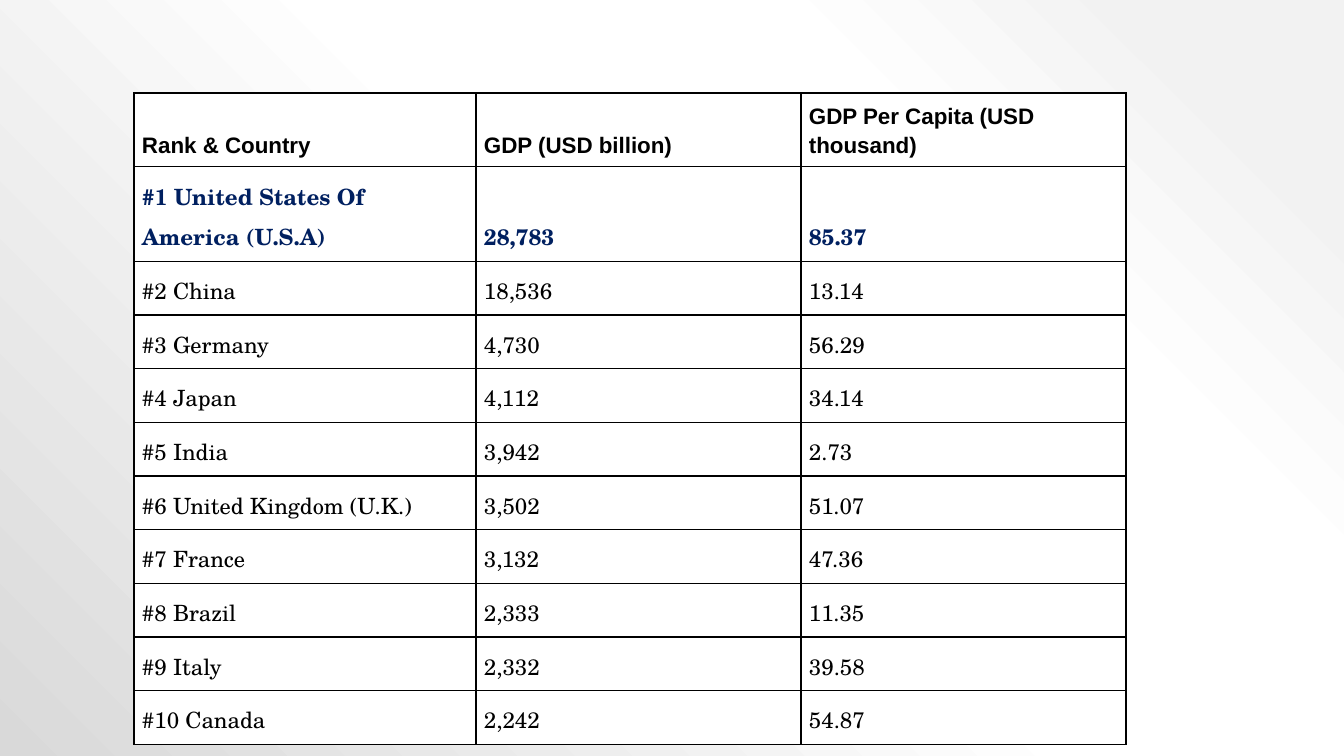
from pptx import Presentation
from pptx.dml.color import RGBColor
from pptx.enum.text import MSO_VERTICAL_ANCHOR as Anchor
from pptx.oxml import parse_xml
from pptx.oxml.ns import nsdecls
from pptx.util import Emu, Pt

BLACK = RGBColor(0x00, 0x00, 0x00)
WHITE = RGBColor(0xFF, 0xFF, 0xFF)
NAVY = RGBColor(0x00, 0x20, 0x60)
MIST = RGBColor(0xF2, 0xF2, 0xF2)
SILVER = RGBColor(0xD9, 0xD9, 0xD9)

BACKDROP_STOPS = [(10, MIST), (28, WHITE), (48, WHITE), (100, SILVER)]
COLUMN_WIDTHS = [342, 325, 325]
ROW_HEIGHTS = [51, 86] + [52] * 9
GDP_ROWS = [
    ("Rank & Country", "GDP (USD billion)", "GDP Per Capita (USD thousand)"),
    ("#1 United States Of America (U.S.A)", "28,783", "85.37"),
    ("#2 China", "18,536", "13.14"),
    ("#3 Germany", "4,730", "56.29"),
    ("#4 Japan", "4,112", "34.14"),
    ("#5 India", "3,942", "2.73"),
    ("#6 United Kingdom (U.K.)", "3,502", "51.07"),
    ("#7 France", "3,132", "47.36"),
    ("#8 Brazil", "2,333", "11.35"),
    ("#9 Italy", "2,332", "39.58"),
    ("#10 Canada", "2,242", "54.87"),
]
HEADER = {"name": "Arial", "bold": True, "color": BLACK}
LEADER = {"name": "TeX Gyre Schola", "bold": True, "color": NAVY}
BODY = {"name": "TeX Gyre Schola", "bold": False, "color": BLACK}
ROW_STYLES = [HEADER, LEADER] + [BODY] * 9


def px(length):
    return Emu(round(length * 914400 / 100.8))


class SlideBuilder:
    text_size = Pt(16)
    line_spacing = 1.15
    border_width = Pt(1)
    cell_format = {
        "vertical_anchor": Anchor.BOTTOM,
        "margin_left": px(8),
        "margin_right": px(8),
        "margin_top": px(8),
        "margin_bottom": px(8),
    }
    table_format = {"first_row": False, "horz_banding": False}

    def __init__(self, deck):
        self.page = deck.slides.add_slide(deck.slide_layouts[6])

    def backdrop(self, stops):
        marks = "".join(
            f'<a:gs pos="{percent * 1000}"><a:srgbClr val="{color}"/></a:gs>'
            for percent, color in stops
        )
        background = parse_xml(
            f'<p:bg {nsdecls("p", "a")}><p:bgPr><a:gradFill rotWithShape="1">'
            f'<a:gsLst>{marks}</a:gsLst><a:path path="circle">'
            '<a:fillToRect l="100000" b="100000"/></a:path></a:gradFill>'
            '<a:effectLst/></p:bgPr></p:bg>'
        )
        self.page.element.cSld.insert(0, background)

    def border(self, cell, color):
        properties = cell._tc.get_or_add_tcPr()
        for side in ("lnL", "lnR", "lnT", "lnB"):
            properties.append(parse_xml(
                f'<a:{side} {nsdecls("a")} w="{self.border_width}"><a:solidFill>'
                f'<a:srgbClr val="{color}"/></a:solidFill></a:{side}>'
            ))

    def cell(self, cell, text, style):
        for name, value in self.cell_format.items():
            setattr(cell, name, value)
        self.border(cell, BLACK)
        cell.fill.solid()
        cell.fill.fore_color.rgb = WHITE
        para = cell.text_frame.paragraphs[0]
        para.line_spacing = self.line_spacing
        span = para.add_run()
        span.text = text
        span.font.size = self.text_size
        span.font.name = style["name"]
        span.font.bold = style["bold"]
        span.font.color.rgb = style["color"]

    def table(self, left, top, widths, heights, rows, styles):
        table = self.page.shapes.add_table(
            len(rows), len(widths), px(left), px(top),
            px(sum(widths)), px(sum(heights)),
        ).table
        for name, value in self.table_format.items():
            setattr(table, name, value)
        for column, width in zip(table.columns, widths):
            column.width = px(width)
        for row, height, texts, style in zip(table.rows, heights, rows, styles):
            row.height = px(height)
            for cell, text in zip(row.cells, texts):
                self.cell(cell, text, style)


def main():
    deck = Presentation()
    deck.slide_width, deck.slide_height = px(1344), px(756)
    builder = SlideBuilder(deck)
    builder.backdrop(BACKDROP_STOPS)
    builder.table(134, 93, COLUMN_WIDTHS, ROW_HEIGHTS, GDP_ROWS, ROW_STYLES)
    deck.save("out.pptx")


if __name__ == "__main__":
    main()
